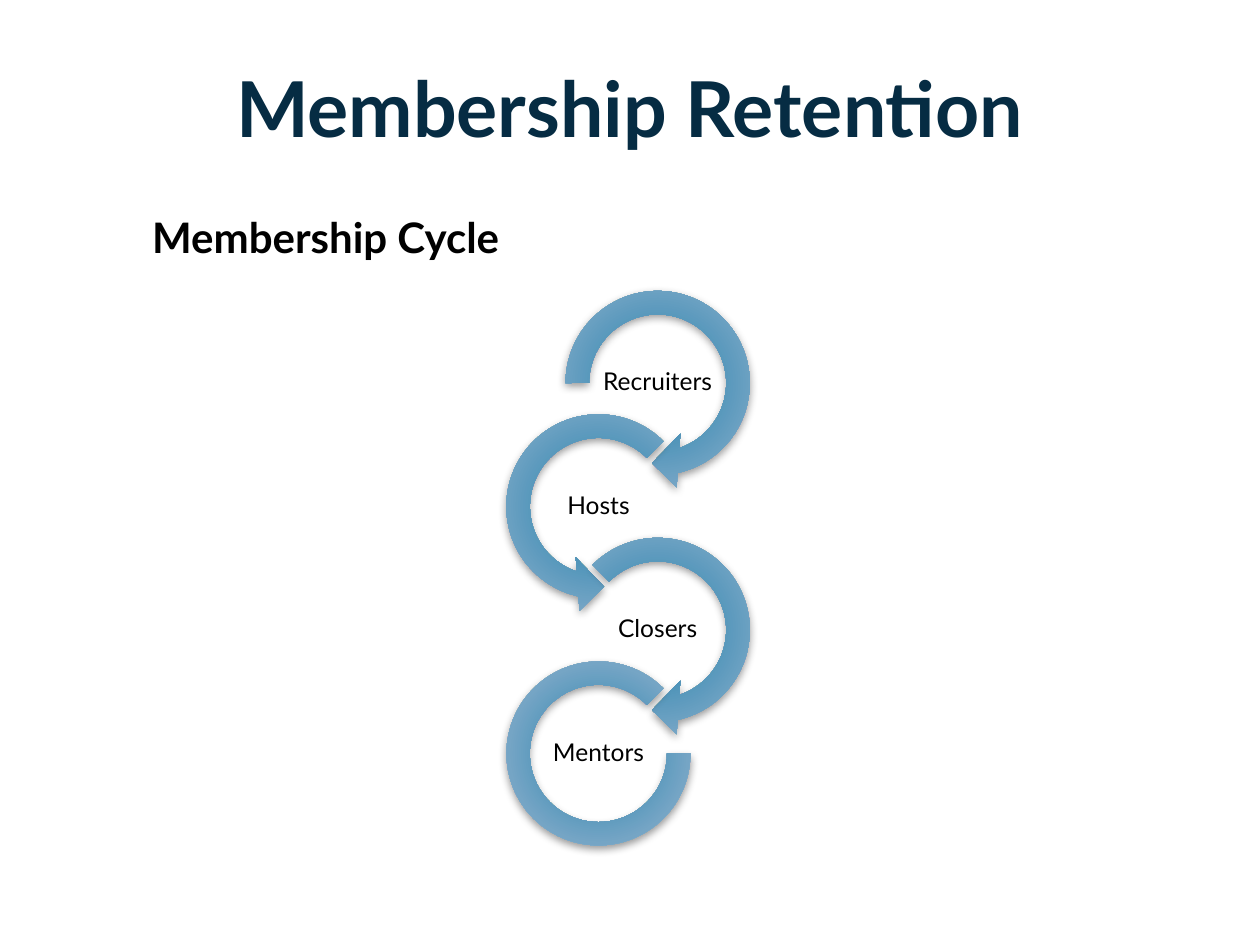
from dataclasses import dataclass

from lxml import etree
from pptx import Presentation
from pptx import util as u
from pptx.dml.color import RGBColor
from pptx.enum import shapes, text
from pptx.oxml import ns

FONT = "Lato"
GRADIENT = ((0, "2080AB"), (69, "75A5C5"), (100, "B8CCDC"))
RING_TOP, RING_STEP = 2.19, 0.98
LABEL_WIDTH, LABEL_HEIGHT = 0.95, 0.47
KIND = shapes.MSO_SHAPE


@dataclass
class Ring:
    label: str
    kind: int
    center: float
    size: float
    adjustments: tuple


RINGS = (
    Ring("Recruiters", KIND.CIRCULAR_ARROW, 5.22, 1.7, (0.11, 11.42, 45, 108, 0.125)),
    Ring("Hosts", KIND.LEFT_CIRCULAR_ARROW, 4.75, 1.7, (0.11, 11.42, 63, 189, 0.125)),
    Ring("Closers", KIND.CIRCULAR_ARROW, 5.22, 1.7, (0.11, 11.42, 45, 135, 0.125)),
    Ring("Mentors", KIND.BLOCK_ARC, 4.75, 1.46, (0, 189, 0.127)),
)


def rgb(value: str) -> RGBColor:
    return RGBColor.from_string(value)


def add_node(parent, tag: str, **values):
    attributes = {name: str(value) for name, value in values.items()}
    return etree.SubElement(parent, ns.qn(tag), attributes)


def add_text(parent, words: str, bounds: tuple, font: dict, color: str = "000000",
             frame: dict | None = None, paragraph: dict | None = None) -> None:
    box = parent.add_textbox(*map(u.Inches, bounds))
    para = box.text_frame.paragraphs[0]
    span = para.add_run()
    span.text = words
    span.font.color.rgb = rgb(color)
    formats = (
        (box.text_frame, {"word_wrap": True} | (frame or {})),
        (para, paragraph or {}),
        (span.font, {"name": FONT} | font),
    )
    for target, values in formats:
        for name, value in values.items():
            setattr(target, name, value)


def paint_gradient(shape) -> None:
    """Fill with a radial gradient that is centred on the far corner."""
    shape.fill.gradient()
    gradient = shape._element.spPr.find(ns.qn("a:gradFill"))
    for child in list(gradient):
        gradient.remove(child)
    stops = add_node(gradient, "a:gsLst")
    for position, color in GRADIENT:
        stop = add_node(stops, "a:gs", pos=position * 1000)
        add_node(stop, "a:srgbClr", val=color)
    radial = add_node(gradient, "a:path", path="circle")
    add_node(radial, "a:fillToRect", l=100000, t=100000, r=100000, b=100000)


def cast_shadow(shape) -> None:
    shape.shadow.inherit = False
    effects = shape._element.spPr.find(ns.qn("a:effectLst"))
    shadow = add_node(effects, "a:outerShdw", blurRad=u.Pt(5), dist=u.Pt(2),
                      dir=90 * 60000, rotWithShape=0)
    color = add_node(shadow, "a:srgbClr", val="000000")
    add_node(color, "a:alpha", val=40000)


def add_ring(parent, ring: Ring, middle: float) -> None:
    half = ring.size / 2
    bounds = (ring.center - half, middle - half, ring.size, ring.size)
    shape = parent.add_shape(ring.kind, *map(u.Inches, bounds))
    for index, value in enumerate(ring.adjustments):
        shape.adjustments[index] = value
    paint_gradient(shape)
    shape.line.fill.background()
    cast_shadow(shape)


def add_label(parent, ring: Ring, middle: float) -> None:
    bounds = (ring.center - LABEL_WIDTH / 2, middle - LABEL_HEIGHT / 2,
              LABEL_WIDTH, LABEL_HEIGHT)
    margins = {f"margin_{side}": u.Inches(0.01)
               for side in ("left", "top", "right", "bottom")}
    add_text(parent, ring.label, bounds, {"size": u.Pt(14)},
             frame=margins | {"vertical_anchor": text.MSO_ANCHOR.MIDDLE},
             paragraph={"alignment": text.PP_ALIGN.CENTER, "line_spacing": 0.9})


def main() -> None:
    deck = Presentation()
    deck.slide_width, deck.slide_height = u.Inches(10), u.Inches(7.5)
    page = deck.slides.add_slide(deck.slide_layouts[6])

    add_text(page.shapes, "Membership Retention", (0.6, 0.12, 8.8, 1.14),
             {"size": u.Pt(44), "bold": True}, "062C43",
             frame={"vertical_anchor": text.MSO_ANCHOR.BOTTOM},
             paragraph={"alignment": text.PP_ALIGN.CENTER})

    cycle = page.shapes.add_group_shape()
    first_middle = RING_TOP + RINGS[0].size / 2
    for index, ring in enumerate(RINGS):
        middle = first_middle + index * RING_STEP
        add_ring(cycle.shapes, ring, middle)
        add_label(cycle.shapes, ring, middle)

    add_text(page.shapes, "Membership Cycle", (1.11, 1.63, 3.44, 0.5),
             {"size": u.Pt(24), "bold": True},
             frame={"auto_size": text.MSO_AUTO_SIZE.SHAPE_TO_FIT_TEXT})

    deck.save("out.pptx")


if __name__ == "__main__":
    main()
